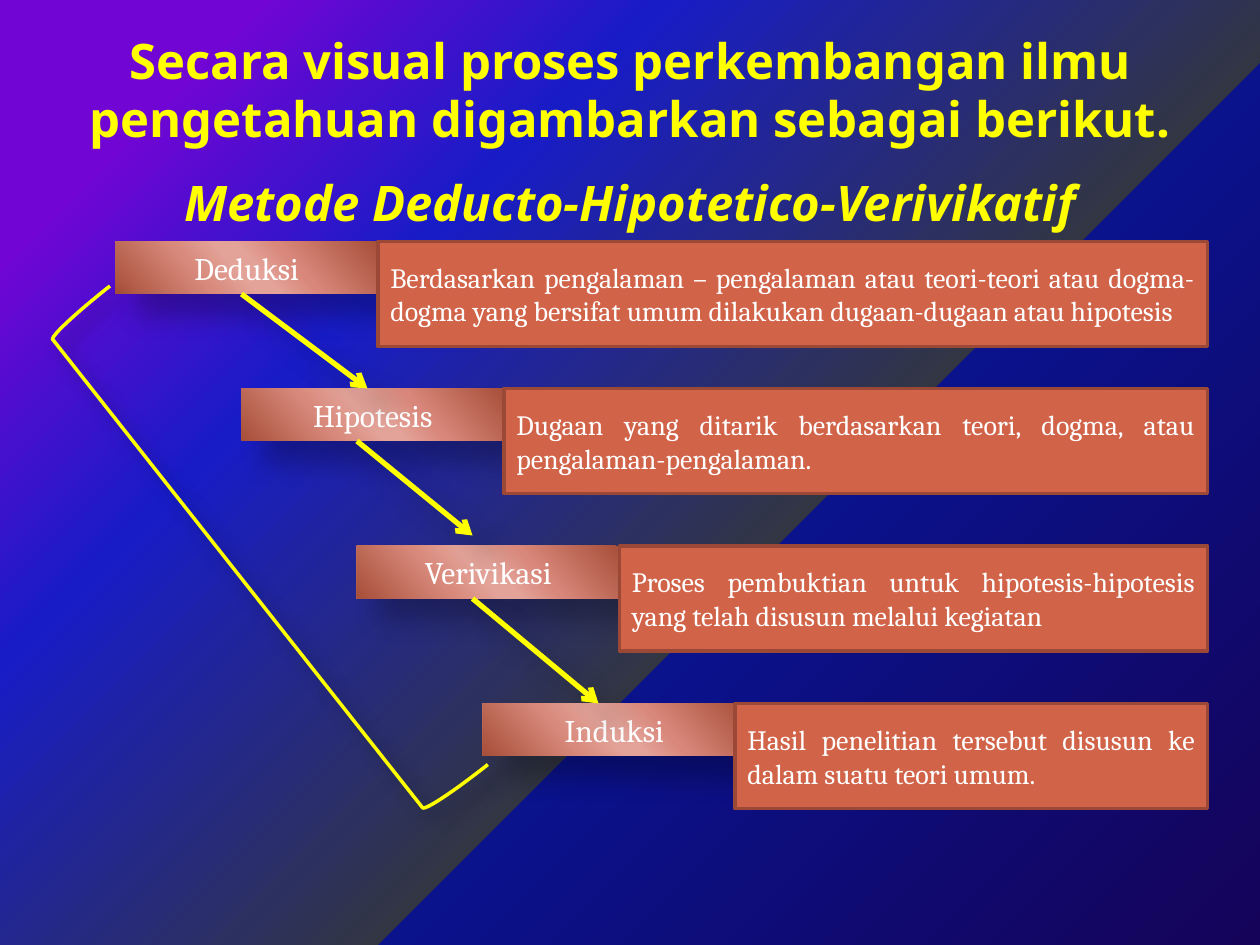
import pptx
import pptx.dml.color
import pptx.enum.shapes
import pptx.enum.text
import pptx.oxml.ns
import pptx.util
from lxml import etree

Pt = pptx.util.Pt
qn = pptx.oxml.ns.qn
SHAPE = pptx.enum.shapes.MSO_SHAPE
ALIGN = pptx.enum.text.PP_ALIGN
MIDDLE = pptx.enum.text.MSO_ANCHOR.MIDDLE

YELLOW, WHITE = "FFFF00", "FFFFFF"
SKY = [(0, "150359"), (40, "0A128C"), (40, "323643"), (70, "181CC7"), (88, "7005D4")]
COPPER = [(0, "A74F3A"), (33, "D8877A"), (47, "E4A399"),
          (53, "E4A399"), (68, "D8897B"), (100, "A74F3A")]
SOFT_SHADOW = (26, 15, 18)
TIGHT_SHADOW = (35, 10.2, 8)
STAGE_W, STAGE_H, DETAIL_H, RIGHT_EDGE = 150, 30, 60, 690

# stage name, stage left, detail left, top, detail text
STAGES = [
    ("Deduksi", 66, 216, 138,
     "Berdasarkan pengalaman – pengalaman atau teori-teori atau dogma-dogma "
     "yang bersifat umum dilakukan dugaan-dugaan atau hipotesis"),
    ("Hipotesis", 138, 288, 222,
     "Dugaan yang ditarik berdasarkan teori, dogma, atau pengalaman-pengalaman."),
    ("Verivikasi", 204, 354, 312,
     "Proses pembuktian untuk hipotesis-hipotesis yang telah disusun melalui kegiatan"),
    ("Induksi", 276, 420, 402,
     "Hasil penelitian tersebut disusun ke dalam suatu teori umum."),
]
ARROWS = [(138, 168, 210, 222), (204, 252, 270, 306), (270, 342, 342, 402)]


def rgb(value):
    return pptx.dml.color.RGBColor.from_string(value)


def sub(parent, tag, **attrs):
    return etree.SubElement(parent, qn(tag), {k: str(v) for k, v in attrs.items()})


def set_gradient(fill, element, stops):
    """Give the fill these stops and return its gradFill element, without direction."""
    fill.gradient()
    grad = element.find(".//" + qn("a:gradFill"))
    for child in list(grad):
        grad.remove(child)
    stop_list = sub(grad, "a:gsLst")
    for position, color in stops:
        stop = sub(stop_list, "a:gs", pos=position * 1000)
        sub(stop, "a:srgbClr", val=color)
    return grad


def add_shadow(sp, alpha, blur, distance):
    """Cast a black shadow down and to the right."""
    sp_pr = sp._element.spPr
    effects = sp_pr.find(qn("a:effectLst"))
    if effects is None:
        effects = sub(sp_pr, "a:effectLst")
    shadow = sub(effects, "a:outerShdw", blurRad=Pt(blur), dist=Pt(distance),
                 dir=45 * 60000, algn="ctr", rotWithShape=0)
    color = sub(shadow, "a:srgbClr", val="000000")
    sub(color, "a:alpha", val=alpha * 1000)


def set_line(line, color, width):
    line.color.rgb = rgb(color)
    line.width = Pt(width)


def format_paragraph(p, align, font, size, color):
    p.alignment = align
    for r in p.runs:
        r.font.name = font
        r.font.size = Pt(size)
        r.font.color.rgb = rgb(color)


def add_box(s, shape, left, top, width, height):
    sp = s.shapes.add_shape(shape, Pt(left), Pt(top), Pt(width), Pt(height))
    sp.shadow.inherit = False
    return sp


def write_box(sp, text, align, size):
    tf = sp.text_frame
    tf.word_wrap = True
    tf.vertical_anchor = MIDDLE
    tf.text = text
    format_paragraph(tf.paragraphs[0], align, "Cambria", size, WHITE)


def add_background(s):
    grad = set_gradient(s.background.fill, s.element, SKY)
    circle = sub(grad, "a:path", path="circle")
    sub(circle, "a:fillToRect", l=100000, t=100000)


def add_title(s):
    sp = s.shapes.add_textbox(Pt(36), Pt(30), Pt(648), Pt(90))
    tf = sp.text_frame
    tf.word_wrap = True
    tf.vertical_anchor = MIDDLE
    tf.text = ("Secara visual proses perkembangan ilmu pengetahuan digambarkan "
               "sebagai berikut.\nMetode Deducto-Hipotetico-Verivikatif")
    for p in tf.paragraphs:
        format_paragraph(p, ALIGN.CENTER, "Noto Sans", 28, YELLOW)
        p.line_spacing = Pt(33)
        p.runs[0].font.bold = True
    method = tf.paragraphs[1]
    method.space_before = Pt(15)
    method.runs[0].font.italic = True


def add_stage(s, name, left, top):
    sp = add_box(s, SHAPE.RECTANGLE, left, top, STAGE_W, STAGE_H)
    grad = set_gradient(sp.fill, sp._element, COPPER)
    sub(grad, "a:lin", ang=139 * 60000, scaled=0)
    sp.line.fill.background()
    add_shadow(sp, *SOFT_SHADOW)
    write_box(sp, name, ALIGN.CENTER, 18)


def add_detail(s, text, left, top):
    sp = add_box(s, SHAPE.RECTANGLE, left, top, RIGHT_EDGE - left, DETAIL_H)
    sp.fill.solid()
    sp.fill.fore_color.rgb = rgb("D16349")
    set_line(sp.line, "9B4936", 2)
    write_box(sp, text, ALIGN.JUSTIFY, 16)


def add_arrow(s, *ends):
    straight = pptx.enum.shapes.MSO_CONNECTOR.STRAIGHT
    arrow = s.shapes.add_connector(straight, *[Pt(v) for v in ends])
    set_line(arrow.line, YELLOW, 3)
    sub(arrow._element.spPr.find(qn("a:ln")), "a:tailEnd", type="arrow")
    add_shadow(arrow, *SOFT_SHADOW)


def add_return_bracket(s):
    """Lead from the last stage back to the first."""
    sp = add_box(s, SHAPE.RIGHT_BRACKET, 131, 139.7, 44.6, 348.5)
    sp.rotation = 141.7
    sp.fill.background()
    set_line(sp.line, YELLOW, 2)
    add_shadow(sp, *TIGHT_SHADOW)


def main():
    prs = pptx.Presentation()
    prs.slide_width, prs.slide_height = Pt(720), Pt(540)
    s = prs.slides.add_slide(prs.slide_layouts[6])
    add_background(s)
    add_title(s)
    for name, left, _, top, _ in STAGES:
        add_stage(s, name, left, top)
    for _, _, left, top, text in STAGES:
        add_detail(s, text, left, top)
    for ends in ARROWS:
        add_arrow(s, *ends)
    add_return_bracket(s)
    prs.save("out.pptx")


if __name__ == "__main__":
    main()
